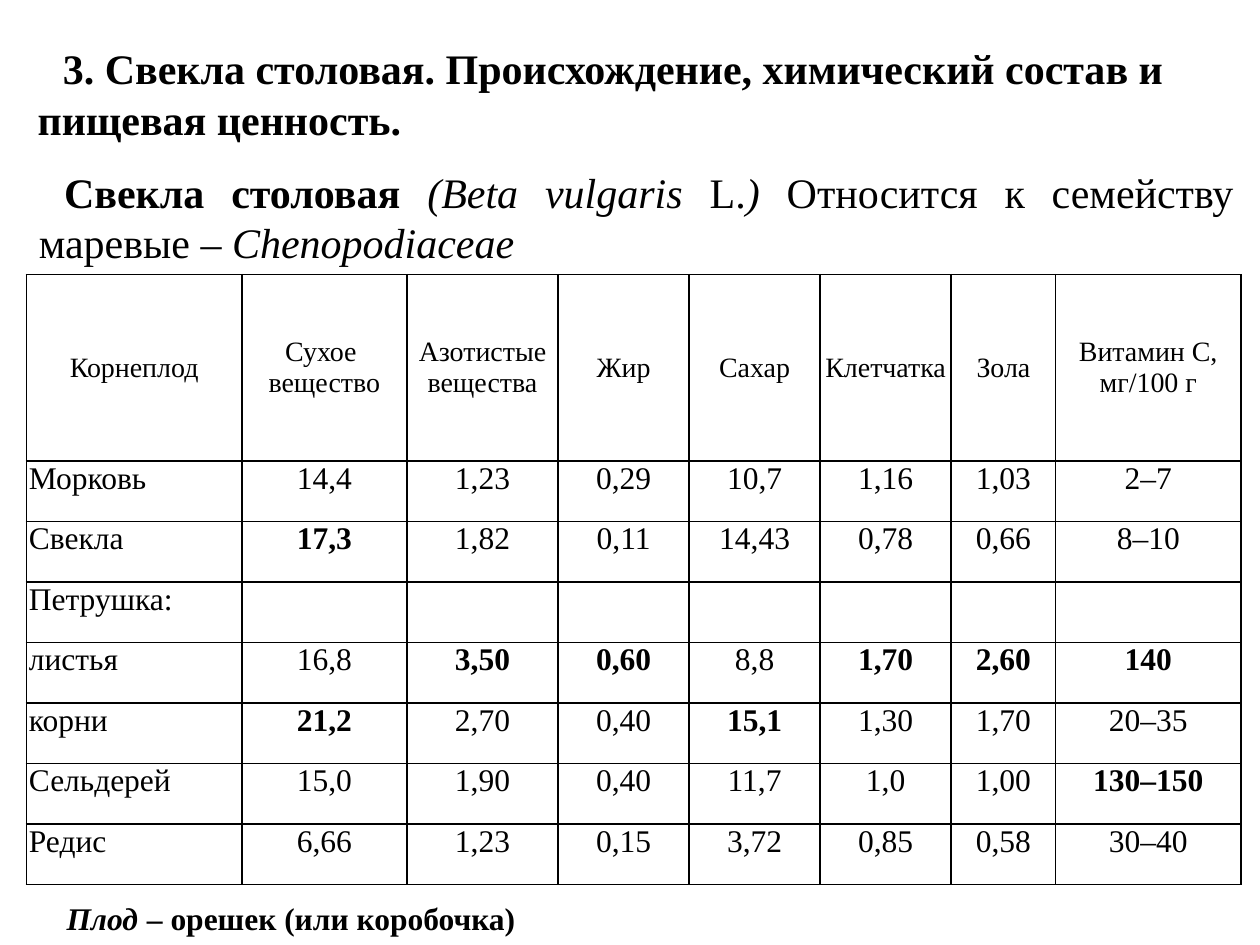
from dataclasses import dataclass

from lxml.etree import SubElement
from pptx import Presentation
from pptx.dml.color import RGBColor as Rgb
from pptx.enum.text import MSO_ANCHOR as Anchor, MSO_AUTO_SIZE as Fit, PP_ALIGN as Align
from pptx.oxml.ns import qn
from pptx.util import Inches, Pt


@dataclass(frozen=True)
class Theme:
    font: str = "Times New Roman"
    ink: Rgb = Rgb(0, 0, 0)
    paper: Rgb = Rgb(255, 255, 255)
    title: int = 24
    head: int = 16
    body: int = 18
    gap: int = 20
    line: int = 1


THEME = Theme()

# The slide is a grid of 100 columns by 75 rows
COLS, ROWS = 100, 75
UNIT = Inches(0.1)

WIDTHS = [17.1, 13.1, 12, 10.4, 10.4, 10.4, 8.3, 14.7]
HEAD_ROW, BODY_ROW = 14.8, 4.8
PAD = 0.2

HEADS = ["Корнеплод", "Сухое \nвещество", "Азотистые вещества", "Жир",
         "Сахар", "Клетчатка", "Зола", "Витамин С, мг/100 г"]

# A leading star marks a bold value
CROPS = [
    ["Морковь", "14,4", "1,23", "0,29", "10,7", "1,16", "1,03", "2–7"],
    ["Свекла", "*17,3", "1,82", "0,11", "14,43", "0,78", "0,66", "8–10"],
    ["Петрушка:"] + [""] * 7,
    ["листья", "16,8", "*3,50", "*0,60", "8,8", "*1,70", "*2,60", "*140"],
    ["корни", "*21,2", "2,70", "0,40", "*15,1", "1,30", "1,70", "20–35"],
    ["Сельдерей", "15,0", "1,90", "0,40", "11,7", "1,0", "1,00", "*130–150"],
    ["Редис", "6,66", "1,23", "0,15", "3,72", "0,85", "0,58", "30–40"],
]


def grid(num):
    return round(num * UNIT)


def add_run(para, text, size, bold=False, slant=False):
    run = para.add_run()
    run.text = text
    font = run.font
    font.name, font.size = THEME.font, Pt(size)
    font.bold, font.italic = bold, slant
    font.color.rgb = THEME.ink


def add_text(slide, box, runs, align=Align.LEFT, indent=0, wrap=True):
    """Place one paragraph; each run is text, size, bold, slant."""
    frame = slide.shapes.add_textbox(*map(grid, box)).text_frame
    frame.word_wrap = wrap
    frame.auto_size = Fit.SHAPE_TO_FIT_TEXT
    para = frame.paragraphs[0]
    para.alignment = align
    if indent:
        para._p.get_or_add_pPr().set("indent", str(grid(indent)))
    for run in runs:
        add_run(para, *run)


def add_edges(cell):
    props = cell._tc.get_or_add_tcPr()
    for spot, side in enumerate(("lnL", "lnR", "lnT", "lnB")):
        edge = props.makeelement(qn(f"a:{side}"), {"w": str(Pt(THEME.line))})
        fill = SubElement(edge, qn("a:solidFill"))
        SubElement(fill, qn("a:srgbClr"), val=str(THEME.ink))
        props.insert(spot, edge)


def fill_cell(cell, text, size, align, anchor):
    cell.fill.solid()
    cell.fill.fore_color.rgb = THEME.paper
    cell.margin_left = cell.margin_right = grid(PAD)
    cell.margin_top = cell.margin_bottom = 0
    cell.vertical_anchor = anchor
    add_edges(cell)
    para = cell.text_frame.paragraphs[0]
    para.alignment = align
    para.font.size = Pt(size)
    if not text:
        return
    for num, line in enumerate(text.lstrip("*").split("\n")):
        if num:
            para.add_line_break()
        add_run(para, line, size, bold=text.startswith("*"))


def add_crops(slide, box):
    """Place the table of root crops."""
    rows = [HEADS] + CROPS
    table = slide.shapes.add_table(len(rows), len(HEADS), *map(grid, box)).table
    table.first_row = table.horz_banding = False
    for col, width in zip(table.columns, WIDTHS):
        col.width = grid(width)
    for top, row in enumerate(rows):
        is_head = top == 0
        table.rows[top].height = grid(HEAD_ROW if is_head else BODY_ROW)
        size = THEME.head if is_head else THEME.body
        anchor = Anchor.MIDDLE if is_head else Anchor.TOP
        for left, text in enumerate(row):
            align = Align.CENTER if is_head or left else Align.LEFT
            fill_cell(table.cell(top, left), text, size, align, anchor)


def add_title(slide, box):
    text = "3. Свекла столовая. Происхождение, химический состав и пищевая ценность."
    add_text(slide, box, [(text, THEME.title, True)], indent=2)


def add_intro(slide, box):
    size = THEME.title
    runs = [
        ("Свекла столовая ", size, True),
        ("(Beta vulgaris ", size, False, True),
        ("L.", size),
        (") ", size, False, True),
        ("Относится к семейству маревые", size),
        (" – Chenopodiaceae", size, False, True),
    ]
    add_text(slide, box, runs, align=Align.JUSTIFY, indent=2)


def add_note(slide, box):
    runs = [
        ("Плод", THEME.body, True, True),
        (" ", THEME.gap, True, True),
        ("– орешек (или коробочка)", THEME.body, True),
    ]
    add_text(slide, box, runs, wrap=False)


def main():
    deck = Presentation()
    deck.slide_width, deck.slide_height = grid(COLS), grid(ROWS)
    slide = deck.slides.add_slide(deck.slide_layouts[6])
    add_intro(slide, (2.1, 12.7, 96.8, 9.1))
    add_title(slide, (2, 2.9, 96.9, 9.1))
    add_crops(slide, (2.1, 21.8, sum(WIDTHS), HEAD_ROW + BODY_ROW * len(CROPS)))
    add_note(slide, (4.3, 70.6, 38, 4.4))
    deck.save("out.pptx")


if __name__ == "__main__":
    main()
